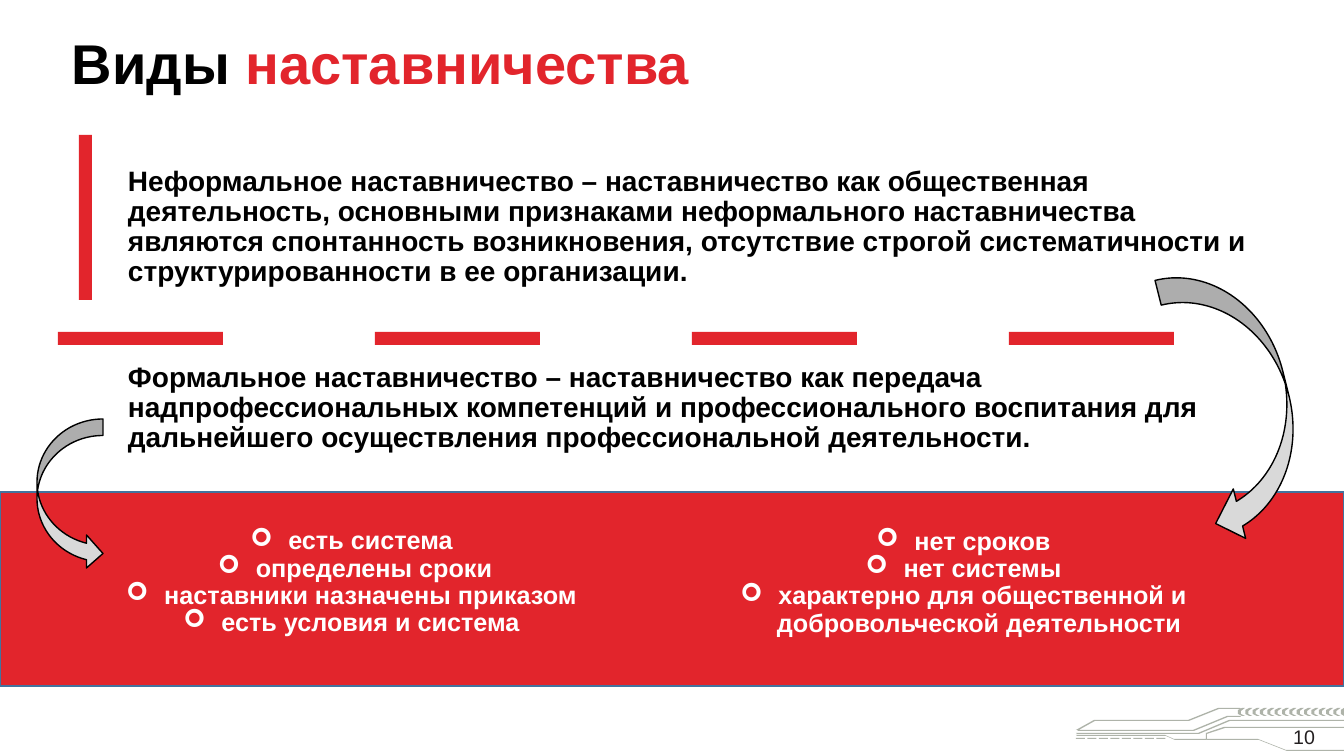
from lxml import etree
from pptx import Presentation
from pptx import util as u
from pptx.dml.color import RGBColor
from pptx.enum import shapes, text
from pptx.oxml.ns import qn

PX = 914400 / 100.8
WIDTH, HEIGHT = 1344, 756
RED, BLACK, WHITE = "E2252C", "000000", "FFFFFF"
GREY, SILVER, NAVY, INK = "AEB3A9", "D9D9D9", "43739E", "231F20"

TITLE = [("Виды ", BLACK), ("наставничества", RED)]
PAGE = "10"
# box, wording
KINDS = [
    ((118, 173, 1146, 109),
     "Неформальное наставничество – наставничество как общественная деятельность, "
     "основными признаками неформального наставничества являются спонтанность "
     "возникновения, отсутствие строгой систематичности и структурированности "
     "в ее организации."),
    ((118, 354, 1146, 109),
     "Формальное наставничество – наставничество как передача надпрофессиональных "
     "компетенций и профессионального воспитания для дальнейшего осуществления "
     "профессиональной деятельности."),
]
# box, bullets
TRAITS = [
    ((707, 515, 513, 136),
     ["нет сроков", "нет системы",
      "характерно для общественной и добровольческой деятельности "]),
    ((19, 528, 672, 109),
     ["есть система ", "определены сроки", "наставники назначены приказом ",
      "есть условия и система "]),
]
# box, turn, mirrored
ARROWS = [((37, 419, 66, 151), 0, False), ((1187, 264, 102, 276), 346, True)]
BAND = (0, 492, WIDTH, 194)
BAR, THICK = 165, 13
DASH_LEFT, DASH_TOP, DASH_STEP, DASHES = 58, 332, 317, 4

# Circuit ornament in the lower right corner
TRACKS = [
    [(1076, 735), (1165, 735), (1174, 739), (1206, 739)],
    [(1240, 708), (1218, 708), (1188, 720), (1094, 720), (1076, 730),
     (1193, 730), (1227, 716), (1240, 716)],
    [(1344, 727), (1224, 727), (1206, 733), (1206, 739), (1258, 739),
     (1286, 750), (1344, 750)],
    [(1076, 733), (1198, 733), (1229, 720), (1344, 720)],
]
HOOK = [(7, 0), (4, 0), (0, 2), (0, 6), (4, 8), (7, 8), (3, 6), (3, 3)]
TICK = [(0, 0), (9, 0), (9, 1), (0, 1)]

prs = Presentation()
prs.slide_width, prs.slide_height = u.Emu(round(WIDTH * PX)), u.Emu(round(HEIGHT * PX))
slide = prs.slides.add_slide(prs.slide_layouts[6])


def emu(box):
    return [u.Emu(round(n * PX)) for n in box]


def color(code):
    return RGBColor.from_string(code)


def paint(shape, fill, line=None):
    shape.shadow.inherit = False
    shape.fill.solid()
    shape.fill.fore_color.rgb = color(fill)
    if line:
        shape.line.color.rgb = color(line)
        shape.line.width = u.Pt(1)
    else:
        shape.line.fill.background()


def add_shape(kind, box, fill, line=None):
    shape = slide.shapes.add_shape(kind, *emu(box))
    paint(shape, fill, line)
    return shape


def add_box(box, inset=(10, 5, 10, 5), anchor=text.MSO_ANCHOR.MIDDLE):
    frame = slide.shapes.add_textbox(*emu(box)).text_frame
    frame.word_wrap = True
    frame.vertical_anchor = anchor
    (frame.margin_left, frame.margin_top,
     frame.margin_right, frame.margin_bottom) = emu(inset)
    return frame


def add_run(para, words, size, code, bold=True):
    run = para.add_run()
    run.text = words
    font = run.font
    font.name, font.size, font.bold = "Arial", u.Pt(size), bold
    font.color.rgb = color(code)


def add_bullet(para):
    props = para._p.get_or_add_pPr()
    indent = round(38 * PX)
    props.set("marL", str(indent))
    props.set("indent", str(-indent))
    etree.SubElement(props, qn("a:buFont")).set("typeface", "Wingdings")
    etree.SubElement(props, qn("a:buChar")).set("char", "➢")


def move(points, left, top):
    return [(left + x, top + y) for x, y in points]


def add_circuit():
    outlines = [line + move(line[::-1], 1, 1) for line in TRACKS]
    outlines += [move(TICK, 1076 + 11.5 * i, 738) for i in range(8)]
    outlines += [move(HOOK, 1238 + 7.35 * i, 708) for i in range(15)]
    path = None
    for line in outlines:
        start, *rest = [(min(x, WIDTH) * PX, y * PX) for x, y in line]
        if path is None:
            path = slide.shapes.build_freeform(*start, scale=1.0)
        else:
            path.move_to(*start)
        path.add_line_segments(rest, close=True)
    paint(path.convert_to_shape(), GREY)


add_circuit()
RECT = shapes.MSO_SHAPE.RECTANGLE
add_shape(RECT, BAND, RED, NAVY)
for i in range(DASHES):
    add_shape(RECT, (DASH_LEFT + DASH_STEP * i, DASH_TOP, BAR, THICK), RED)
add_shape(RECT, (79, 135, THICK, BAR), RED)

para = add_box((1260, 725, 55, 24), (0, 0, 0, 0)).paragraphs[0]
para.alignment = text.PP_ALIGN.RIGHT
add_run(para, PAGE, 14, INK, False)

para = add_box((71, 28, 768, 70), (1, 1, 0, 0), text.MSO_ANCHOR.TOP).paragraphs[0]
for words, code in TITLE:
    add_run(para, words, 40, code)

for box, words in KINDS:
    para = add_box(box).paragraphs[0]
    para.line_spacing = 0.9
    add_run(para, words, 20, BLACK)

for box, items in TRAITS:
    frame = add_box(box)
    for i, words in enumerate(items):
        para = frame.add_paragraph() if i else frame.paragraphs[0]
        para.alignment = text.PP_ALIGN.CENTER
        para.line_spacing = 0.9
        add_bullet(para)
        add_run(para, words, 18, WHITE)

for box, turn, mirrored in ARROWS:
    arrow = add_shape(shapes.MSO_SHAPE.CURVED_RIGHT_ARROW, box, SILVER, BLACK)
    arrow.rotation = turn
    if mirrored:
        arrow._element.spPr.find(qn("a:xfrm")).set("flipH", "1")

prs.save("out.pptx")
